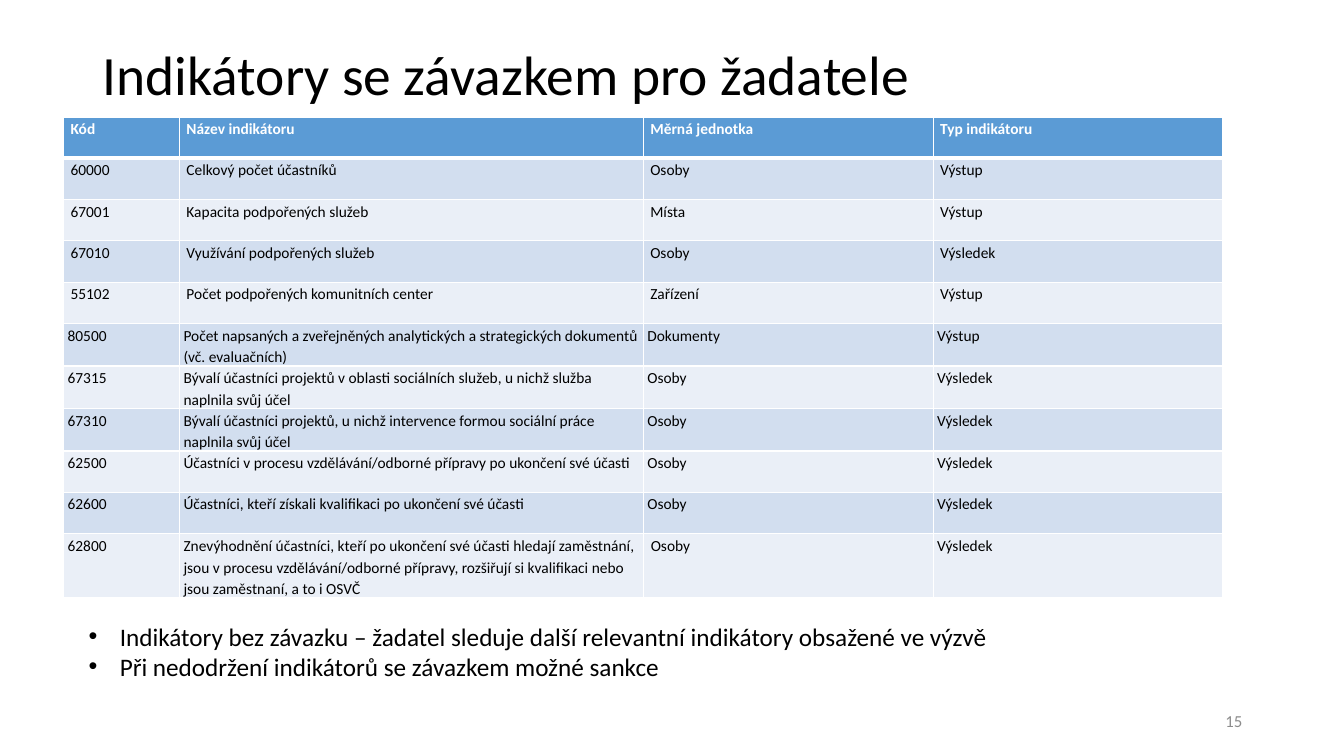
import pptx
import pptx.dml.color
import pptx.enum.text
import pptx.oxml.ns
import pptx.util
from lxml import etree

Inches, Pt = pptx.util.Inches, pptx.util.Pt
ALIGN, ANCHOR = pptx.enum.text.PP_ALIGN, pptx.enum.text.MSO_ANCHOR
WIDTH, HEIGHT = 13.33, 7.5
FONT = "Calibri"
BLACK, WHITE, GREY = "000000", "FFFFFF", "8C8C8C"
HEADER_FILL, BANDS = "5B9BD5", ("D2DEEF", "EAEFF7")

HEADER = ("Kód", "Název indikátoru ", "Měrná jednotka ", "Typ indikátoru ")
INSET_INDICATORS = [
    ("60000", "Celkový počet účastníků", "Osoby", "Výstup"),
    ("67001", "Kapacita podpořených služeb", "Místa", "Výstup"),
    ("67010", "Využívání podpořených služeb", "Osoby", "Výsledek"),
    ("55102", "Počet podpořených komunitních center", "Zařízení", "Výstup"),
]
INDENTED_INDICATORS = [
    ("80500", "Počet napsaných a zveřejněných analytických a strategických "
     "dokumentů (vč. evaluačních)", "Dokumenty", "Výstup"),
    ("67315", "Bývalí účastníci projektů v oblasti sociálních služeb, u nichž "
     "služba naplnila svůj účel", "Osoby", "Výsledek"),
    ("67310", "Bývalí účastníci projektů, u nichž intervence formou sociální "
     "práce naplnila svůj účel", "Osoby", "Výsledek"),
    ("62500", "Účastníci v procesu vzdělávání/odborné přípravy po ukončení "
     "své účasti", "Osoby", "Výsledek"),
    ("62600", "Účastníci, kteří získali kvalifikaci po ukončení své účasti",
     "Osoby", "Výsledek"),
    ("62800", "Znevýhodnění účastníci, kteří po ukončení své účasti hledají "
     "zaměstnání, jsou v procesu vzdělávání/odborné přípravy, rozšiřují si "
     "kvalifikaci nebo jsou zaměstnaní, a to i OSVČ", " Osoby", "Výsledek"),
]
NOTES = [
    "Indikátory bez závazku – žadatel sleduje další relevantní indikátory "
    "obsažené ve výzvě",
    "Při nedodržení indikátorů se závazkem možné sankce",
]


def colour(value):
    return pptx.dml.color.RGBColor.from_string(value)


def set_font(paragraph, size, value, bold=False):
    font = paragraph.font
    font.name, font.size, font.bold = FONT, Pt(size), bold
    font.color.rgb = colour(value)


def add_text(slide, box, lines, size, value, anchor=ANCHOR.TOP):
    frame = slide.shapes.add_textbox(*map(Inches, box)).text_frame
    frame.word_wrap = True
    frame.vertical_anchor = anchor
    frame.text = "\n".join(lines)
    for paragraph in frame.paragraphs:
        set_font(paragraph, size, value)
    return frame


def add_title(slide, box):
    title = add_text(slide, box, ["Indikátory se závazkem pro žadatele"],
                     39.6, BLACK, ANCHOR.MIDDLE)
    title.paragraphs[0].line_spacing = 0.9


def add_page_number(slide, box):
    number = add_text(slide, box, ["15"], 12, GREY, ANCHOR.MIDDLE)
    number.paragraphs[0].alignment = ALIGN.RIGHT


def add_notes(slide, box):
    notes = add_text(slide, box, NOTES, 18, BLACK)
    notes.auto_size = pptx.enum.text.MSO_AUTO_SIZE.SHAPE_TO_FIT_TEXT
    for paragraph in notes.paragraphs:
        properties = paragraph._p.get_or_add_pPr()
        properties.set("marL", str(Inches(0.31)))
        properties.set("indent", str(-Inches(0.31)))
        for tag, key, value in (("a:buFont", "typeface", "Arial"),
                                ("a:buChar", "char", "•")):
            etree.SubElement(properties, pptx.oxml.ns.qn(tag)).set(key, value)


def add_borders(cell, bottom):
    properties = cell._tc.get_or_add_tcPr()
    for side, width in (("L", 1), ("R", 1), ("T", 1), ("B", bottom)):
        line = etree.SubElement(properties, pptx.oxml.ns.qn("a:ln" + side),
                                w=str(Pt(width)))
        fill = etree.SubElement(line, pptx.oxml.ns.qn("a:solidFill"))
        etree.SubElement(fill, pptx.oxml.ns.qn("a:srgbClr"), val=WHITE)


def fill_cell(cell, text, fill, header, indented):
    add_borders(cell, 3 if header else 1)
    cell.fill.solid()
    cell.fill.fore_color.rgb = colour(fill)
    cell.margin_left = cell.margin_right = Inches(0 if indented else 0.07)
    cell.margin_top = cell.margin_bottom = 0
    cell.text = text
    paragraph = cell.text_frame.paragraphs[0]
    set_font(paragraph, 11, WHITE if header else BLACK, header)
    paragraph.line_spacing = 1.15
    paragraph.space_after = Pt(3 if indented else 6)
    if header:
        paragraph.alignment = ALIGN.JUSTIFY
    if indented:
        paragraph.space_before = Pt(3)
        paragraph._p.get_or_add_pPr().set("marL", str(Inches(0.04)))


def add_indicators(slide, box):
    rows = [HEADER] + INSET_INDICATORS + INDENTED_INDICATORS
    first_indented = 1 + len(INSET_INDICATORS)
    table = slide.shapes.add_table(len(rows), len(HEADER),
                                   *map(Inches, box)).table
    # Column widths as shares of the table
    for column, share in zip(table.columns, (0.1, 0.4, 0.25, 0.25)):
        column.width = Inches(box[2] * share)
    # Header and banded rows
    for index, texts in enumerate(rows):
        table.rows[index].height = Inches(0.41)
        header = index == 0
        fill = HEADER_FILL if header else BANDS[(index - 1) % 2]
        for column, text in enumerate(texts):
            fill_cell(table.cell(index, column), text, fill, header,
                      index >= first_indented)


def main():
    deck = pptx.Presentation()
    deck.slide_width, deck.slide_height = Inches(WIDTH), Inches(HEIGHT)
    slide = deck.slides.add_slide(deck.slide_layouts[6])
    body_width = 11.5
    add_title(slide, (0.92, 0.4, body_width, 0.74))
    add_indicators(slide, (0.63, 1.16, body_width, 4.74))
    add_page_number(slide, (9.42, 6.95, 3, 0.4))
    add_notes(slide, (0.78, 6.11, body_width, 0.71))
    deck.save("out.pptx")


if __name__ == "__main__":
    main()
